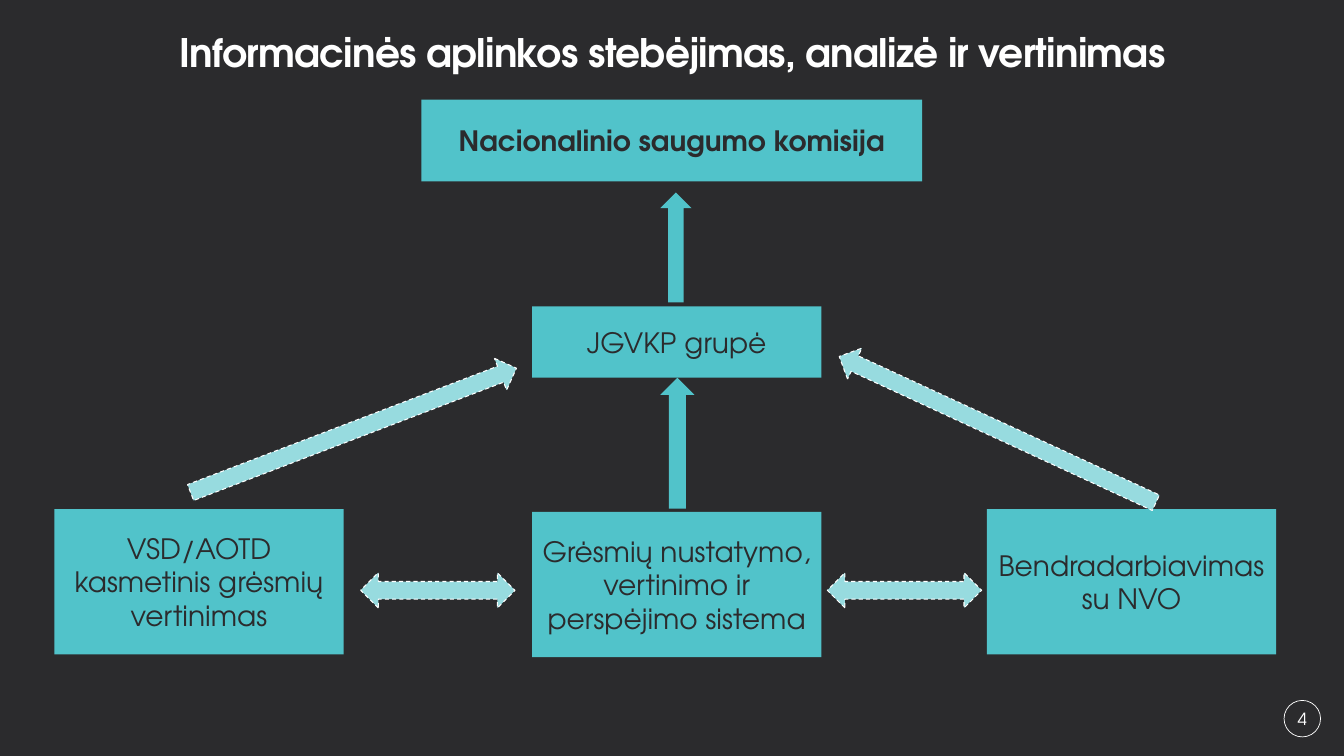
import dataclasses

import pptx
import pptx.dml.color
import pptx.enum.dml
import pptx.enum.shapes
import pptx.enum.text
import pptx.util

Cm = pptx.util.Cm
Pt = pptx.util.Pt
Kind = pptx.enum.shapes.MSO_SHAPE

COLORS = {
    "background": "2B2B2D",
    "teal": "51C3CA",
    "pale": "97DBDF",
    "white": "FFFFFF",
}
FONT = "TeX Gyre Adventor"
BOX_WIDTH = 7.29
MIDDLE_LEFT = 13.41
SOURCE_HEIGHT = 3.66


@dataclasses.dataclass
class Box:
    text: str
    left: float
    top: float
    width: float
    height: float
    bold: bool = False


@dataclasses.dataclass
class Arrow:
    left: float
    top: float
    width: float
    height: float
    rotation: float = 0
    double: bool = False
    dashed: bool = True


BOXES = [
    Box("Nacionalinio saugumo komisija", 10.62, 2.51, 12.62, 2.06, bold=True),
    Box("VSD/AOTD kasmetinis grėsmių vertinimas", 1.37, 12.83, BOX_WIDTH, SOURCE_HEIGHT),
    Box("Grėsmių nustatymo, vertinimo ir perspėjimo sistema",
        MIDDLE_LEFT, 12.9, BOX_WIDTH, SOURCE_HEIGHT),
    Box("Bendradarbiavimas su NVO", 24.87, 12.83, BOX_WIDTH, SOURCE_HEIGHT),
    Box("JGVKP grupė", MIDDLE_LEFT, 7.72, BOX_WIDTH, 1.8),
]
ARROWS = [
    Arrow(8.48, 6.45, 0.86, 8.79, rotation=69.1),
    Arrow(24.71, 6.43, 0.86, 8.79, rotation=294.8),
    Arrow(16.64, 9.52, 0.86, 3.3, dashed=False),
    Arrow(16.64, 4.85, 0.79, 2.77, dashed=False),
    Arrow(22.35, 12.93, 0.89, 3.89, rotation=270, double=True),
    Arrow(10.59, 12.93, 0.89, 3.89, rotation=270, double=True),
]


def rgb(name: str) -> pptx.dml.color.RGBColor:
    return pptx.dml.color.RGBColor.from_string(COLORS[name])


def write(shape, text: str, size: float, color: str, bold: bool = False):
    frame = shape.text_frame
    frame.word_wrap = True
    frame.vertical_anchor = pptx.enum.text.MSO_ANCHOR.MIDDLE
    para = frame.paragraphs[0]
    para.alignment = pptx.enum.text.PP_ALIGN.CENTER
    para.font.name = FONT
    para.font.size = Pt(size)
    para.font.bold = bold
    para.font.color.rgb = rgb(color)
    para.add_run().text = text
    return para


def clear_margins(shape) -> None:
    frame = shape.text_frame
    frame.margin_left = frame.margin_right = 0
    frame.margin_top = frame.margin_bottom = 0


def add_title(page, text: str) -> None:
    title = page.shapes.add_textbox(Cm(4.19), Cm(0.53), Cm(25.5), Cm(1.73))
    clear_margins(title)
    para = write(title, text, 28, "white", bold=True)
    para.line_spacing = 0.86
    for span in para.runs:
        span._r.get_or_add_rPr().set("spc", "-50")


def add_page_number(page, number: str) -> None:
    circle = page.shapes.add_shape(Kind.OVAL, Cm(32.36), Cm(17.65), Cm(0.92), Cm(0.92))
    circle.shadow.inherit = False
    circle.fill.background()
    circle.line.color.rgb = rgb("white")
    circle.line.width = Pt(0.5)
    clear_margins(circle)
    write(circle, number, 12, "white")
    circle.text_frame.word_wrap = False


def add_box(page, box: Box) -> None:
    shape = page.shapes.add_shape(
        Kind.RECTANGLE, Cm(box.left), Cm(box.top), Cm(box.width), Cm(box.height))
    shape.shadow.inherit = False
    shape.fill.solid()
    shape.fill.fore_color.rgb = rgb("teal")
    shape.line.fill.background()
    write(shape, box.text, 20, "background", box.bold)


def add_arrow(page, arrow: Arrow) -> None:
    kind = Kind.UP_DOWN_ARROW if arrow.double else Kind.UP_ARROW
    shape = page.shapes.add_shape(
        kind, Cm(arrow.left), Cm(arrow.top), Cm(arrow.width), Cm(arrow.height))
    shape.rotation = arrow.rotation
    shape.shadow.inherit = False
    shape.fill.solid()
    shape.fill.fore_color.rgb = rgb("pale" if arrow.dashed else "teal")
    if arrow.dashed:
        shape.line.color.rgb = rgb("white")
        shape.line.width = Pt(0.75)
        shape.line.dash_style = pptx.enum.dml.MSO_LINE.DASH
    else:
        shape.line.fill.background()


def main() -> None:
    deck = pptx.Presentation()
    deck.slide_width = Cm(33.87)
    deck.slide_height = Cm(19.05)
    page = deck.slides.add_slide(deck.slide_layouts[6])
    page.background.fill.solid()
    page.background.fill.fore_color.rgb = rgb("background")
    add_page_number(page, "4")
    add_title(page, "Informacinės aplinkos stebėjimas, analizė ir vertinimas")
    for box in BOXES:
        add_box(page, box)
    for arrow in ARROWS:
        add_arrow(page, arrow)
    deck.save("out.pptx")


if __name__ == "__main__":
    main()
